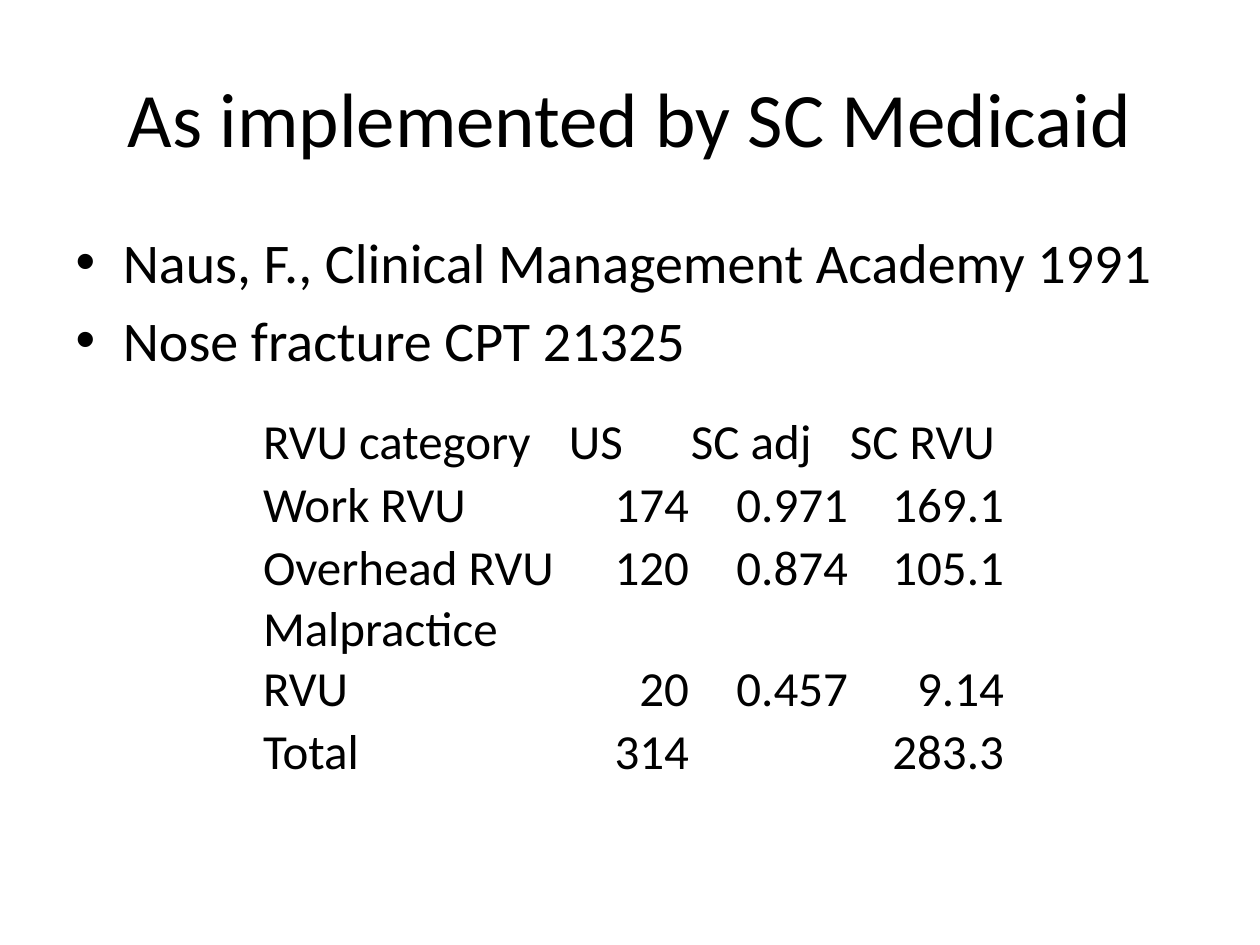
from pptx import Presentation
from pptx.dml.color import RGBColor
from pptx.enum.text import MSO_ANCHOR, PP_ALIGN
from pptx.util import Emu, Pt

BOTTOM = MSO_ANCHOR.BOTTOM
LEFT = PP_ALIGN.LEFT
CENTER = PP_ALIGN.CENTER
RIGHT = PP_ALIGN.RIGHT
EMU_PER_PX = 914400 / 126


def px(length):
    return Emu(round(length * EMU_PER_PX))


def add_text(paragraph, text, size, alignment, color="000000"):
    paragraph.alignment = alignment
    run = paragraph.add_run()
    run.text = text
    run.font.name = "Calibri"
    run.font.size = Pt(size)
    run.font.color.rgb = RGBColor.from_string(color)


presentation = Presentation()
presentation.slide_width = px(1260)
presentation.slide_height = px(945)
slide = presentation.slides.add_slide(presentation.slide_layouts[1])

title = slide.shapes.title
title.left, title.top, title.width, title.height = px(63), px(38), px(1134), px(158)
add_text(title.text_frame.paragraphs[0], "As implemented by SC Medicaid", 44, CENTER)

body = slide.placeholders[1]
body.left, body.top, body.width, body.height = px(63), px(221), px(1134), px(624)
bullets = ["Naus, F., Clinical Management Academy 1991", "Nose fracture CPT 21325"]
for index, bullet in enumerate(bullets):
    frame = body.text_frame
    paragraph = frame.add_paragraph() if index else frame.paragraphs[0]
    add_text(paragraph, bullet, 32, LEFT)

rvu_rows = [
    ["RVU category", "US", "SC adj", "SC RVU"],
    ["Work RVU", "174", "0.971", "169.1"],
    ["Overhead RVU", "120", "0.874", "105.1"],
    ["Malpractice RVU", "20", "0.457", "9.14"],
    ["Total", "314", "", "283.3"],
]
column_widths = [306, 122, 159, 156]
row_height = 63

table = slide.shapes.add_table(
    len(rvu_rows), len(column_widths), px(262), px(410),
    px(sum(column_widths)), px(row_height * len(rvu_rows)),
).table
table.first_row = False
table.horz_banding = False
for column, width in zip(table.columns, column_widths):
    column.width = px(width)

for row_index, values in enumerate(rvu_rows):
    table.rows[row_index].height = px(row_height)
    for column_index, value in enumerate(values):
        cell = table.cell(row_index, column_index)
        cell.fill.background()
        cell.vertical_anchor = BOTTOM
        cell.margin_left = cell.margin_right = cell.margin_top = px(1)
        cell.margin_bottom = 0
        if value:
            alignment = RIGHT if row_index and column_index else LEFT
            add_text(cell.text_frame.paragraphs[0], value, 28, alignment)

presentation.save("out.pptx")
